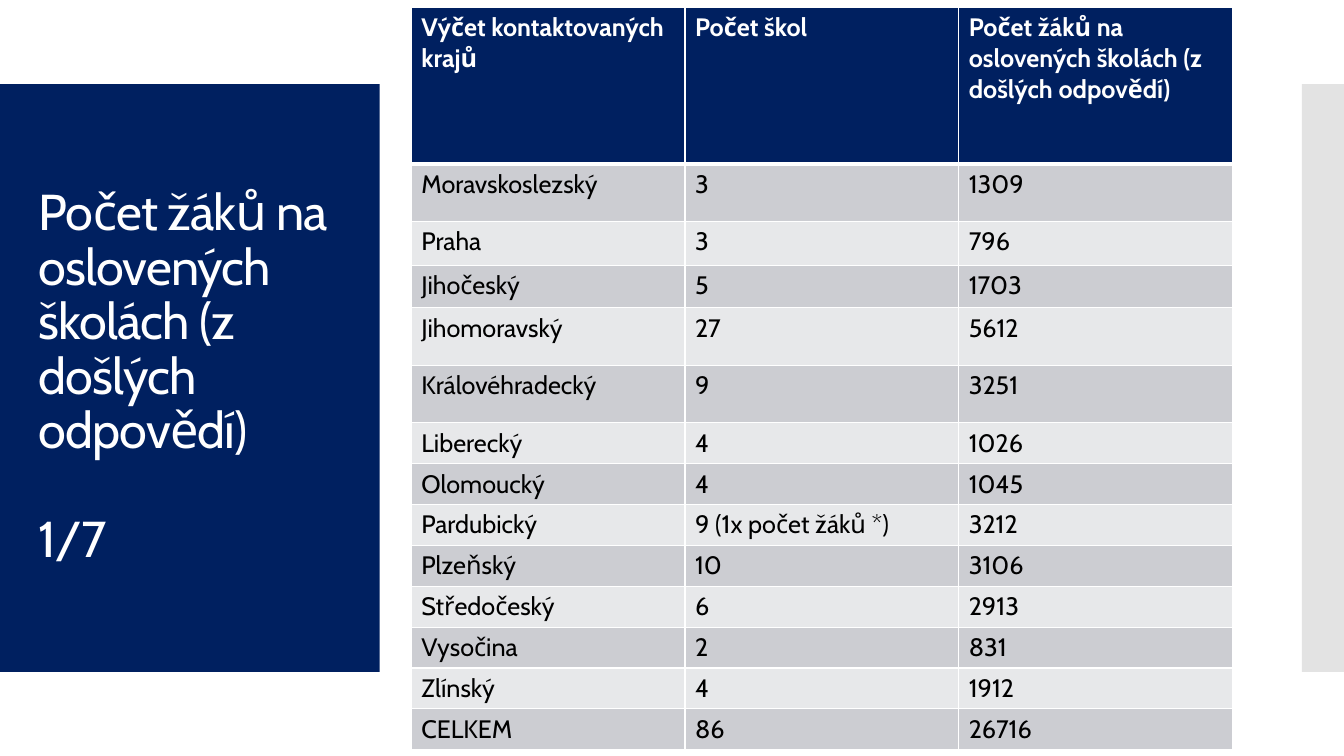
import pptx
import pptx.util
import pptx.dml.color
import pptx.enum.shapes
import pptx.enum.text
import pptx.oxml
import pptx.oxml.ns

WIDTH, HEIGHT = pptx.util.Inches(13.333), pptx.util.Inches(7.5)
FONT = "Cabin"
COLORS = {"navy": "002060", "grey": "C8C8C8", "white": "FFFFFF", "black": "000000",
          "odd": "CCCDD2", "even": "E7E8EA"}

HEADINGS = ("Výčet kontaktovaných krajů", "Počet škol",
            "Počet žáků na oslovených školách (z došlých odpovědí)")
REGIONS = [
    ("Moravskoslezský", "3", "1309"),
    ("Praha", "3", "796"),
    ("Jihočeský", "5", "1703"),
    ("Jihomoravský", "27", "5612"),
    ("Královéhradecký", "9", "3251"),
    ("Liberecký", "4", "1026"),
    ("Olomoucký", "4", "1045"),
    ("Pardubický", "9 (1x počet žáků *)", "3212"),
    ("Plzeňský", "10", "3106"),
    ("Středočeský", "6", "2913"),
    ("Vysočina", "2", "831"),
    ("Zlínský", "4", "1912"),
    ("CELKEM", "86", "26716"),
]
ROW_HEIGHTS = [1.55, 0.57, 0.44, 0.42, 0.57, 0.57] + [0.38] * 8


def share(left, top, width, height):
    """Turn shares of the slide into a box of lengths."""
    return (round(left * WIDTH), round(top * HEIGHT),
            round(width * WIDTH), round(height * HEIGHT))


def rgb(name):
    return pptx.dml.color.RGBColor.from_string(COLORS[name])


def set_all(target, formats):
    for attribute, value in formats.items():
        setattr(target, attribute, value)


def style_font(font, size, color, bold=False):
    set_all(font, {"name": FONT, "size": pptx.util.Pt(size), "bold": bold})
    font.color.rgb = rgb(color)


def add_panel(slide, box, color, opacity=100):
    panel = slide.shapes.add_shape(pptx.enum.shapes.MSO_SHAPE.RECTANGLE, *box)
    panel.shadow.inherit = False
    panel.fill.solid()
    panel.fill.fore_color.rgb = rgb(color)
    panel.line.fill.background()
    if opacity < 100:
        tint = panel.fill._xPr.find(".//" + pptx.oxml.ns.qn("a:srgbClr"))
        tint.append(pptx.oxml.parse_xml(
            f'<a:alpha {pptx.oxml.ns.nsdecls("a")} val="{opacity * 1000}"/>'))


def add_title(slide, box):
    left, top, width, height = box
    add_panel(slide, box, "navy")
    title = slide.shapes.title
    slide.shapes._spTree.append(title._element)  # bring in front of the panel
    set_all(title, {"left": left + round(width * 0.075), "top": top + round(height * 0.07),
                    "width": round(width * 0.855), "height": round(height * 0.86)})
    frame = title.text_frame
    set_all(frame, {"word_wrap": True, "auto_size": pptx.enum.text.MSO_AUTO_SIZE.NONE,
                    "vertical_anchor": pptx.enum.text.MSO_ANCHOR.MIDDLE})
    frame.text = "Počet žáků na oslovených školách (z došlých odpovědí)\n1/7"
    for paragraph, gap in zip(frame.paragraphs, (0, 39)):
        set_all(paragraph, {"alignment": pptx.enum.text.PP_ALIGN.LEFT, "line_spacing": 0.9,
                            "space_before": pptx.util.Pt(gap)})
        run = paragraph.runs[0]
        style_font(run.font, 36, "white")
        run.font._element.set("spc", "-60")


def set_borders(cell, widths):
    properties = cell._tc.get_or_add_tcPr()
    for position, (side, width) in enumerate(widths.items()):
        properties.insert(position, pptx.oxml.parse_xml(
            f'<a:ln{side} {pptx.oxml.ns.nsdecls("a")} w="{pptx.util.Pt(width)}"><a:solidFill>'
            f'<a:srgbClr val="{COLORS["white"]}"/></a:solidFill></a:ln{side}>'))


def add_region_table(slide, box):
    rows = [HEADINGS] + REGIONS
    table = slide.shapes.add_table(len(rows), len(HEADINGS), *box).table
    table.horz_banding = False
    for column in table.columns:
        column.width = box[2] // len(HEADINGS)
    for number, (values, height) in enumerate(zip(rows, ROW_HEIGHTS)):
        header = number == 0
        table.rows[number].height = pptx.util.Inches(height)
        fill = "navy" if header else ("even", "odd")[number % 2]
        widths = {"L": 1, "R": 1, "T": 3 if number == 1 else 1, "B": 3 if header else 1}
        for cell, value in zip(table.rows[number].cells, values):
            cell.text = value
            cell.fill.solid()
            cell.fill.fore_color.rgb = rgb(fill)
            set_borders(cell, widths)
            style_font(cell.text_frame.paragraphs[0].runs[0].font, 18,
                       "white" if header else "black", header)


def main():
    deck = pptx.Presentation()
    set_all(deck, {"slide_width": WIDTH, "slide_height": HEIGHT})
    slide = deck.slides.add_slide(deck.slide_layouts[5])

    # Side panels, title and table
    add_panel(slide, share(31 / 32, 1 / 9, 1 / 32, 7 / 9), "grey", 50)
    add_title(slide, share(0, 1 / 9, 0.2825, 7 / 9))
    add_region_table(slide, share(0.306, 0.01, 0.611, 0.975))

    deck.save("out.pptx")


if __name__ == "__main__":
    main()
